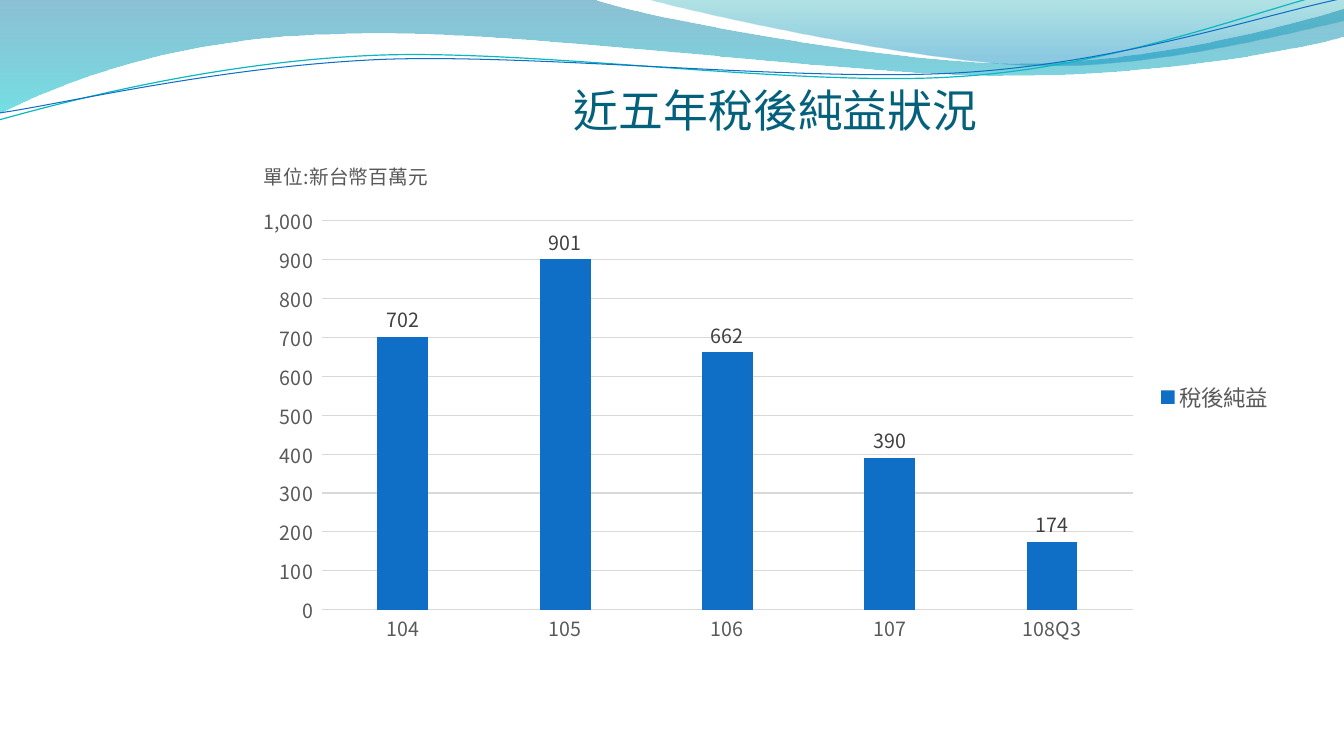
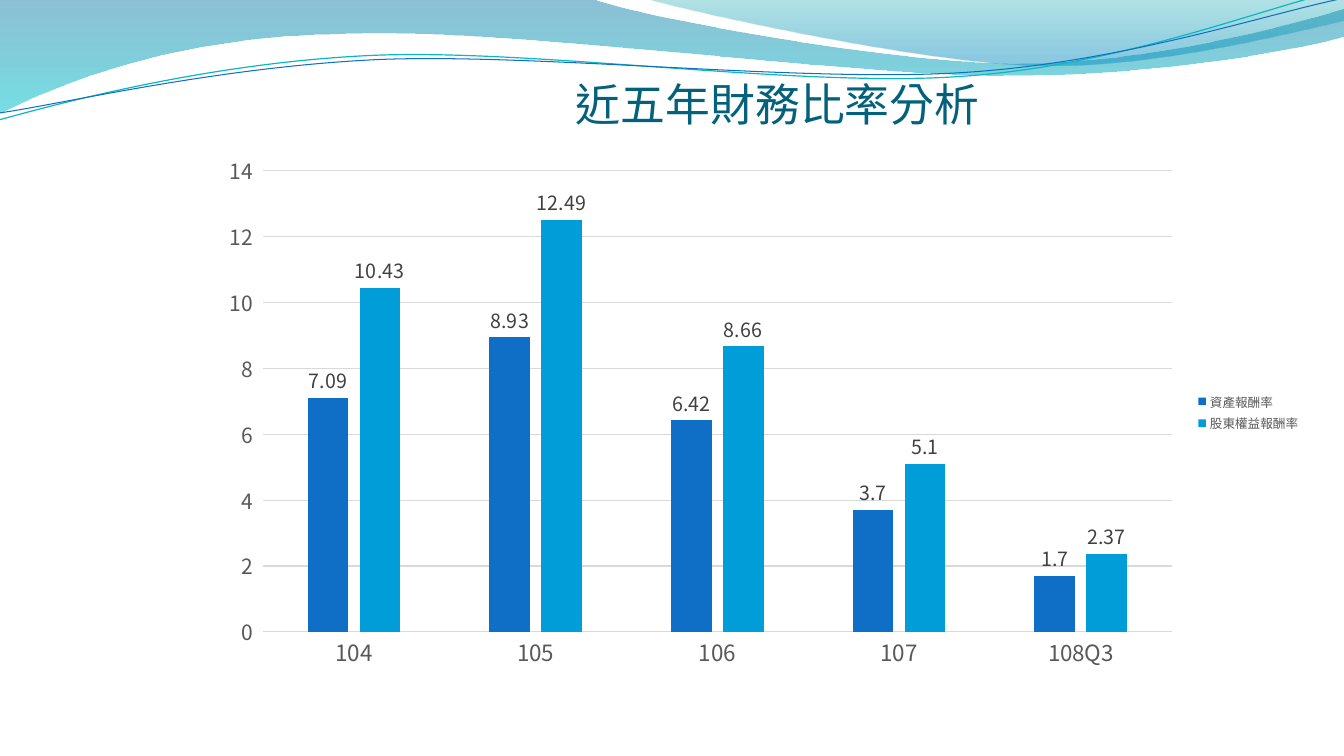
from dataclasses import dataclass
from math import cos, radians, sin

from pptx import Presentation
from pptx.chart.data import CategoryChartData
from pptx.dml.color import RGBColor
from pptx.enum.chart import XL_CHART_TYPE, XL_LABEL_POSITION, XL_LEGEND_POSITION, XL_TICK_MARK
from pptx.enum.lang import MSO_LANGUAGE_ID
from pptx.enum.text import MSO_ANCHOR, PP_ALIGN
from pptx.oxml import parse_xml
from pptx.oxml.ns import nsdecls, qn
from pptx.util import Pt

PX = 9144  # EMU: 100 px to the inch


@dataclass(frozen=True)
class Theme:
    font: str = "Noto Sans CJK SC"
    chart_font: str = "Vollkorn"
    title: str = "04617B"
    axis_text: str = "595959"
    label_text: str = "404040"
    grid: str = "D9D9D9"
    series: tuple = ("0F6FC6", "009DD9")
    title_size: int = 32
    chart_size: int = 10
    label_size: int = 14
    hairline: float = 0.75


theme = Theme()


def format_font(font, size, color, name=theme.font):
    font.size = Pt(size)
    font.name = name
    font.bold = False
    font.color.rgb = RGBColor.from_string(color)


def write_text(text_frame, text, size, color, align=PP_ALIGN.LEFT):
    paragraph = text_frame.paragraphs[0]
    paragraph.alignment = align
    run = paragraph.add_run()
    run.text = text
    run.font.language_id = MSO_LANGUAGE_ID.TRADITIONAL_CHINESE
    format_font(run.font, size, color)


# Each path is a start point followed by lines (x, y) and cubic curves (x1, y1, x2, y2, x, y).
# Gradient stops are (position, colour, opacity in percent).
waves = [
    dict(
        path=[(0, 0), (587, -1), (634, 17, 885, 63, 1011, 63), (1138, 63, 1278, 26, 1333, 9),
              (1335, 36), (1311, 44, 1160, 76, 994, 75), (829, 75, 509, 28, 343, 34),
              (172, 36, 61, 83, -1, 113)],
        stops=[(0, "0074A1", 45), (1, "00C6CF", 55)],
    ),
    dict(
        path=[(639, -1), (679, 11, 909, 62, 1025, 65), (1141, 69, 1282, 32, 1333, 21), (1333, 0)],
        stops=[(0, "00A1A9", 30), (0.8, "008BBF", 45)],
    ),
    dict(
        path=[(-1, 119), (64, 101, 211, 62, 369, 55), (527, 48, 790, 87, 950, 76),
              (1110, 66, 1252, 8, 1331, -10)],
        line=("0AB8BF", 0.85), center=(665, 57), tilt=-2.7,
    ),
    dict(
        path=[(0, 112), (63, 103, 218, 66, 378, 59), (537, 53, 796, 82, 955, 72),
              (1115, 62, 1255, 14, 1334, -2)],
        line=("0F6FC6", theme.hairline), center=(667, 59), tilt=-2.7,
    ),
]

categories = ["104", "105", "106", "107", "108Q3"]
pages = [
    dict(
        title="近五年稅後純益狀況", title_box=(282, 78, 975, 57),
        chart_box=(241, 141, 1032, 506), plot_box=(319, 219, 805, 386),
        unit="單位:新台幣百萬元", unit_at=(258, 154),
        series={"稅後純益": (702, 901, 662, 390, 174)},
        maximum=1000, step=100, number_format=r"#,##0_);[Red]\(#,##0\)", tick=XL_TICK_MARK.NONE,
        category_size=14, value_size=14, legend_size=16, legend_font=theme.font,
    ),
    dict(
        title="近五年財務比率分析", title_box=(284, 68, 975, 61),
        chart_box=(206, 144, 1094, 530), plot_box=(261, 169, 901, 458),
        unit=None,
        series={"資產報酬率": (7.09, 8.93, 6.42, 3.7, 1.7),
                "股東權益報酬率": (10.43, 12.49, 8.66, 5.1, 2.37)},
        maximum=14, step=2, number_format="General", tick=XL_TICK_MARK.OUTSIDE,
        category_size=16, value_size=15, legend_size=9, legend_font=theme.chart_font,
    ),
]

presentation = Presentation()
presentation.slide_width = 1333 * PX
presentation.slide_height = 750 * PX
layout = presentation.slide_layouts[6]
slides = [presentation.slides.add_slide(layout) for page in pages]

# The waves are drawn on a slide, then moved to the layout that every slide shares.
for placeholder in list(layout.placeholders):
    layout.shapes.element.remove(placeholder.element)
for wave in waves:
    # The points are turned back by the tilt, which the rotation of the shape then restores.
    tilt = wave.get("tilt", 0)
    center_x, center_y = wave.get("center", (0, 0))
    cosine, sine = cos(radians(-tilt)), sin(radians(-tilt))
    points = []
    for segment in wave["path"]:
        for x, y in zip(segment[::2], segment[1::2]):
            across, down = x - center_x, y - center_y
            points.append((round((center_x + across * cosine - down * sine) * PX),
                           round((center_y + across * sine + down * cosine) * PX)))
    builder = slides[0].shapes.build_freeform(*points[0])
    builder.add_line_segments(points[1:], close="stops" in wave)
    shape = builder.convert_to_shape()
    shape.rotation = tilt
    shape.shadow.inherit = False

    # Three line ends in a row become the control points of one curve.
    line_ends = iter(list(shape.element.iter(qn("a:lnTo"))))
    for segment in wave["path"][1:]:
        ends = [next(line_ends) for _ in segment[::2]]
        if len(ends) == 3:
            curve = parse_xml(f'<a:cubicBezTo {nsdecls("a")}/>')
            ends[0].addprevious(curve)
            for end in ends:
                curve.append(end[0])
                end.getparent().remove(end)

    if "stops" in wave:
        shape.line.fill.background()
        shape.fill.gradient()
        shape.fill.gradient_angle = 270
        for stop, (position, color, opacity) in zip(shape.fill.gradient_stops, wave["stops"]):
            stop.position = position
            stop.color.rgb = RGBColor.from_string(color)
        for color_element, (position, color, opacity) in zip(
                shape.element.iter(qn("a:srgbClr")), wave["stops"]):
            color_element.append(parse_xml(f'<a:alpha {nsdecls("a")} val="{opacity * 1000}"/>'))
    else:
        color, width = wave["line"]
        shape.fill.background()
        shape.line.color.rgb = RGBColor.from_string(color)
        shape.line.width = Pt(width)
    layout.shapes.element.append(shape.element)

for slide, page in zip(slides, pages):
    title = slide.shapes.add_textbox(*(length * PX for length in page["title_box"]))
    frame = title.text_frame
    frame.word_wrap = True
    frame.vertical_anchor = MSO_ANCHOR.BOTTOM
    frame.margin_left = frame.margin_right = frame.margin_bottom = 0
    frame.margin_top = 5 * PX
    write_text(frame, page["title"], size=theme.title_size, color=theme.title, align=PP_ALIGN.CENTER)

    data = CategoryChartData()
    data.categories = categories
    for name, values in page["series"].items():
        data.add_series(name, values)
    chart = slide.shapes.add_chart(XL_CHART_TYPE.COLUMN_CLUSTERED,
                                   *(length * PX for length in page["chart_box"]), data).chart
    format_font(chart.font, theme.chart_size, "000000", theme.chart_font)

    plot = chart.plots[0]
    plot.gap_width = 219
    plot.overlap = -27
    plot.vary_by_categories = False
    for series, color in zip(plot.series, theme.series):
        series.format.fill.solid()
        series.format.fill.fore_color.rgb = RGBColor.from_string(color)
        labels = series.data_labels
        labels.show_value = True
        labels.position = XL_LABEL_POSITION.OUTSIDE_END
        format_font(labels.font, theme.label_size, theme.label_text)

    category_axis, value_axis = chart.category_axis, chart.value_axis
    category_axis.major_tick_mark = XL_TICK_MARK.NONE
    value_axis.major_tick_mark = page["tick"]
    value_axis.minimum_scale = 0
    value_axis.maximum_scale = page["maximum"]
    value_axis.major_unit = page["step"]
    value_axis.tick_labels.number_format = page["number_format"]
    value_axis.tick_labels.number_format_is_linked = False
    value_axis.format.line.fill.background()
    for line in (category_axis.format.line, value_axis.major_gridlines.format.line):
        line.color.rgb = RGBColor.from_string(theme.grid)
        line.width = Pt(theme.hairline)
    format_font(category_axis.tick_labels.font, page["category_size"], theme.axis_text)
    format_font(value_axis.tick_labels.font, page["value_size"], theme.axis_text)

    chart.has_legend = True
    chart.legend.position = XL_LEGEND_POSITION.RIGHT
    chart.legend.include_in_layout = False
    format_font(chart.legend.font, page["legend_size"], theme.axis_text, page["legend_font"])

    # Manual places are fractions of the chart frame.
    chart_root = chart.element
    left, top, width, height = page["chart_box"]
    plot_left, plot_top, plot_width, plot_height = page["plot_box"]
    places = [(chart_root.find(".//" + qn("c:plotArea")), 0,
               {"x": (plot_left - left) / width, "y": (plot_top - top) / height,
                "w": plot_width / width, "h": plot_height / height})]
    chart.has_title = page["unit"] is not None
    if chart.has_title:
        write_text(chart.chart_title.text_frame, page["unit"], size=theme.label_size, color=theme.axis_text)
        unit_left, unit_top = page["unit_at"]
        places.append((chart_root.find(".//" + qn("c:title")), 1,
                       {"x": (unit_left - left) / width, "y": (unit_top - top) / height}))
    for target, index, fractions in places:
        for automatic in target.findall(qn("c:layout")):
            target.remove(automatic)
        inner = '<c:layoutTarget val="inner"/>' if "w" in fractions else ""
        values = "".join(f'<c:{key} val="{value:.4f}"/>' for key, value in fractions.items())
        target.insert(index, parse_xml(
            f'<c:layout {nsdecls("c")}><c:manualLayout>{inner}<c:xMode val="edge"/>'
            f'<c:yMode val="edge"/>{values}</c:manualLayout></c:layout>'))

    # Chinese text takes its typeface from a:ea.
    for root in (title.element, chart_root):
        for latin in list(root.iter(qn("a:latin"))):
            latin.addnext(parse_xml(f'<a:ea {nsdecls("a")} typeface="{theme.font}"/>'))

presentation.save("out.pptx")
